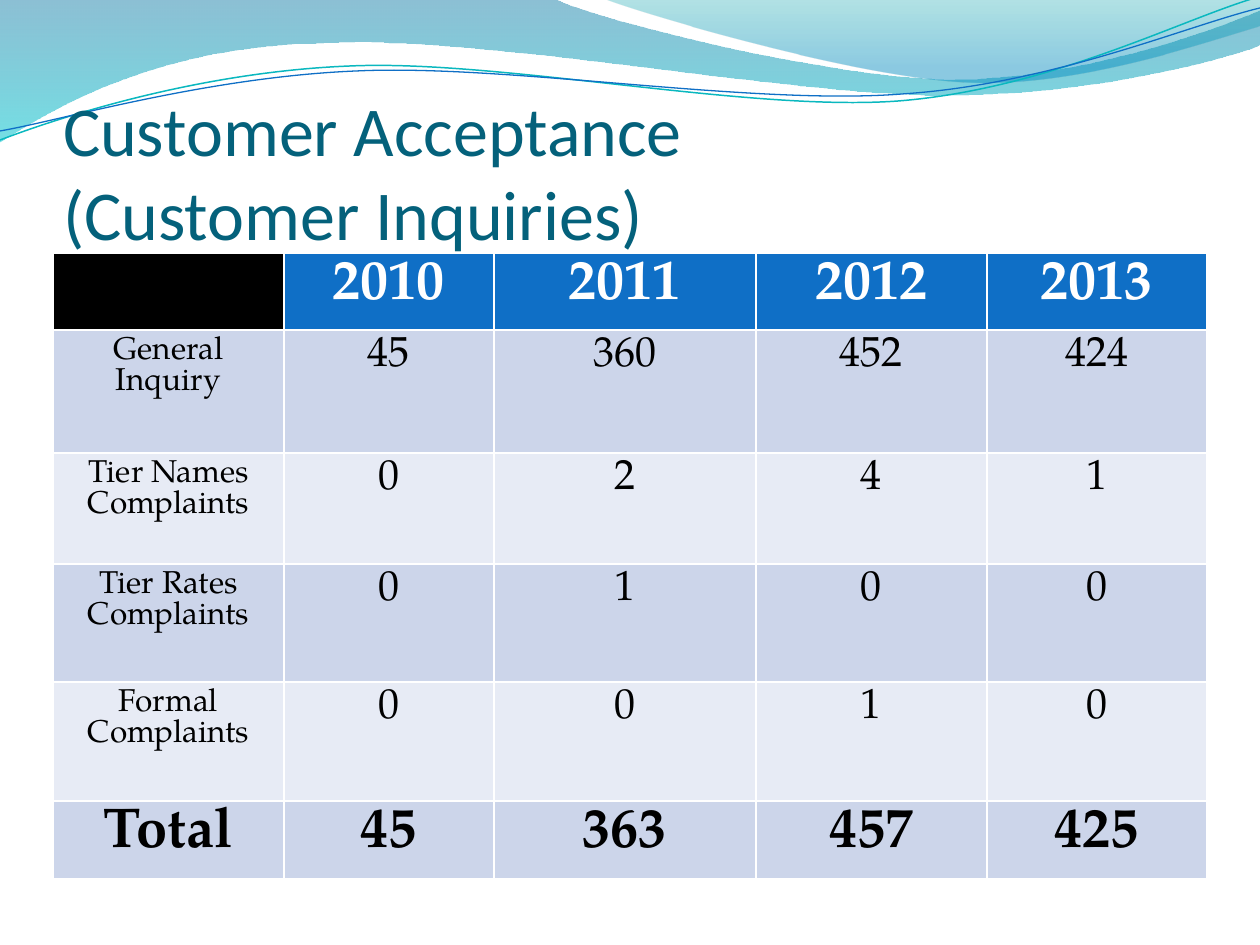
import lxml.etree
import pptx
import pptx.dml.color
import pptx.enum.text
import pptx.oxml.ns
import pptx.util

RGB = pptx.dml.color.RGBColor
qn = pptx.oxml.ns.qn
PX = 914400 / 126
SLIDE_SIZE = (1260, 945)

TITLE_LINES = ["Customer Acceptance ", "(Customer Inquiries)"]
TITLE_BOX = (63, 97, 1134, 158)
INQUIRIES = [
    ["", "2010", "2011", "2012", "2013"],
    ["General Inquiry", "45", "360", "452", "424"],
    ["Tier Names Complaints", "0", "2", "4", "1"],
    ["Tier Rates Complaints", "0", "1", "0", "0"],
    ["Formal Complaints", "0", "0", "1", "0"],
    ["Total", "45", "363", "457", "425"],
]
TABLE_CORNER = (53, 253)
COLUMN_WIDTHS = [231, 210, 262, 231, 220]
ROW_HEIGHTS = [77, 123, 111, 118, 119, 78]

TITLE_FONT, TABLE_FONT = "Calibri", "TeX Gyre Pagella"
TITLE_COLOR = RGB(0x04, 0x61, 0x7B)
BLUE = RGB(0x0F, 0x6F, 0xC6)
TEAL = RGB(0x0A, 0xB8, 0xBF)
BLACK = RGB(0, 0, 0)
WHITE = RGB(255, 255, 255)
BANDS = [RGB(0xE7, 0xEB, 0xF5), RGB(0xCC, 0xD5, 0xEA)]

# Outlines: a start point, then one point per straight line or three per curve.
# Gradient stops: position, colour, opacity in percent.
WAVES = [
    ([[(0, 0)], [(554, -1)],
      [(600, 21), (837, 79), (955, 79)], [(1075, 79), (1207, 33), (1260, 11)],
      [(1261, 45)],
      [(1239, 55), (1096, 96), (940, 95)], [(784, 95), (481, 35), (324, 43)],
      [(163, 45), (58, 105), (-1, 142)]],
     [(0, RGB(0x00, 0x74, 0xA1), 45), (1, RGB(0x00, 0xC6, 0xCF), 55)]),
    ([[(604, -1)],
      [(641, 14), (859, 78), (969, 82)], [(1079, 87), (1211, 40), (1260, 26)],
      [(1260, 0)]],
     [(0, RGB(0x00, 0xA1, 0xA9), 30), (0.8, RGB(0x00, 0x8B, 0xBF), 45)]),
]
RIPPLES = [
    ([[(0, 140)],
      [(60, 117), (199, 72), (349, 66)], [(498, 59), (747, 112), (898, 101)],
      [(1050, 89), (1182, 19), (1258, -3)]], TEAL, 0.85),
    ([[(0, 131)],
      [(59, 121), (207, 77), (357, 71)], [(508, 64), (752, 106), (903, 94)],
      [(1053, 84), (1186, 26), (1260, 8)]], BLUE, 0.75),
]


def px(length):
    return round(length * PX)


def add_outline(slide, segments, close):
    """Join the segment ends by lines, then bend those that have control points."""
    ends = [(px(x), px(y)) for x, y in (segment[-1] for segment in segments)]
    builder = slide.shapes.build_freeform(*ends[0])
    builder.add_line_segments(ends[1:], close=close)
    outline = builder.convert_to_shape()
    outline.shadow.inherit = False
    sides = list(outline.element.spPr.iter(qn("a:lnTo")))
    for side, segment in zip(sides, segments[1:]):
        if len(segment) == 3:
            curve = lxml.etree.Element(qn("a:cubicBezTo"))
            for x, y in segment:
                lxml.etree.SubElement(curve, qn("a:pt"), x=str(px(x) - outline.left),
                                      y=str(px(y) - outline.top))
            side.getparent().replace(side, curve)
    return outline


def add_wave(slide, segments, stops):
    wave = add_outline(slide, segments, True)
    wave.line.fill.background()
    wave.fill.gradient()
    wave.fill.gradient_angle = 270
    colors = wave.element.spPr.iter(qn("a:gs"))
    for stop, gs, (position, color, opacity) in zip(wave.fill.gradient_stops, colors, stops):
        stop.position = position
        stop.color.rgb = color
        lxml.etree.SubElement(gs[0], qn("a:alpha"), val=str(opacity * 1000))
    return wave


def add_ripple(slide, segments, color, width):
    ripple = add_outline(slide, segments, False)
    ripple.fill.background()
    ripple.line.color.rgb = color
    ripple.line.width = pptx.util.Pt(width)
    return ripple


def move_to_master(decorations, master):
    tree = master.shapes.element
    for number, decoration in enumerate(decorations, start=101):
        decoration.element.nvSpPr.cNvPr.set("id", str(number))
        tree.append(decoration.element)


def add_run(paragraph, text, font, size, color, bold=False):
    run = paragraph.add_run()
    run.text = text
    run.font.name = font
    run.font.size = pptx.util.Pt(size)
    run.font.color.rgb = color
    run.font.bold = bold


def fill_title(title):
    title.left, title.top, title.width, title.height = map(px, TITLE_BOX)
    frame = title.text_frame
    frame.auto_size = pptx.enum.text.MSO_AUTO_SIZE.NONE
    frame.vertical_anchor = pptx.enum.text.MSO_ANCHOR.BOTTOM
    frame.margin_left = frame.margin_right = frame.margin_bottom = 0
    frame.margin_top = px(6)
    paragraph = frame.paragraphs[0]
    paragraph.alignment = pptx.enum.text.PP_ALIGN.LEFT
    for index, line in enumerate(TITLE_LINES):
        if index:
            paragraph.add_line_break()
        add_run(paragraph, line, TITLE_FONT, 40, TITLE_COLOR)


def add_inquiry_table(slide):
    """The default table style supplies the white borders."""
    last = len(INQUIRIES) - 1
    table = slide.shapes.add_table(
        len(INQUIRIES), len(COLUMN_WIDTHS), *map(px, TABLE_CORNER),
        px(sum(COLUMN_WIDTHS)), px(sum(ROW_HEIGHTS))).table
    for column, width in zip(table.columns, COLUMN_WIDTHS):
        column.width = px(width)
    for r, (values, height) in enumerate(zip(INQUIRIES, ROW_HEIGHTS)):
        table.rows[r].height = px(height)
        strong = r in (0, last)
        for c, text in enumerate(values):
            cell = table.cell(r, c)
            cell.fill.solid()
            header_color = BLUE if c else BLACK
            cell.fill.fore_color.rgb = BANDS[r % 2] if r else header_color
            paragraph = cell.text_frame.paragraphs[0]
            paragraph.alignment = pptx.enum.text.PP_ALIGN.CENTER
            size = 32 if strong else 24 if c else 18
            if text:
                add_run(paragraph, text, TABLE_FONT, size, BLACK if r else WHITE, strong)


def main():
    presentation = pptx.Presentation()
    presentation.slide_width, presentation.slide_height = map(px, SLIDE_SIZE)
    slide = presentation.slides.add_slide(presentation.slide_layouts[5])
    decorations = [add_wave(slide, *wave) for wave in WAVES]
    decorations += [add_ripple(slide, *ripple) for ripple in RIPPLES]
    move_to_master(decorations, presentation.slide_master)
    fill_title(slide.shapes.title)
    add_inquiry_table(slide)
    presentation.save("out.pptx")


if __name__ == "__main__":
    main()
